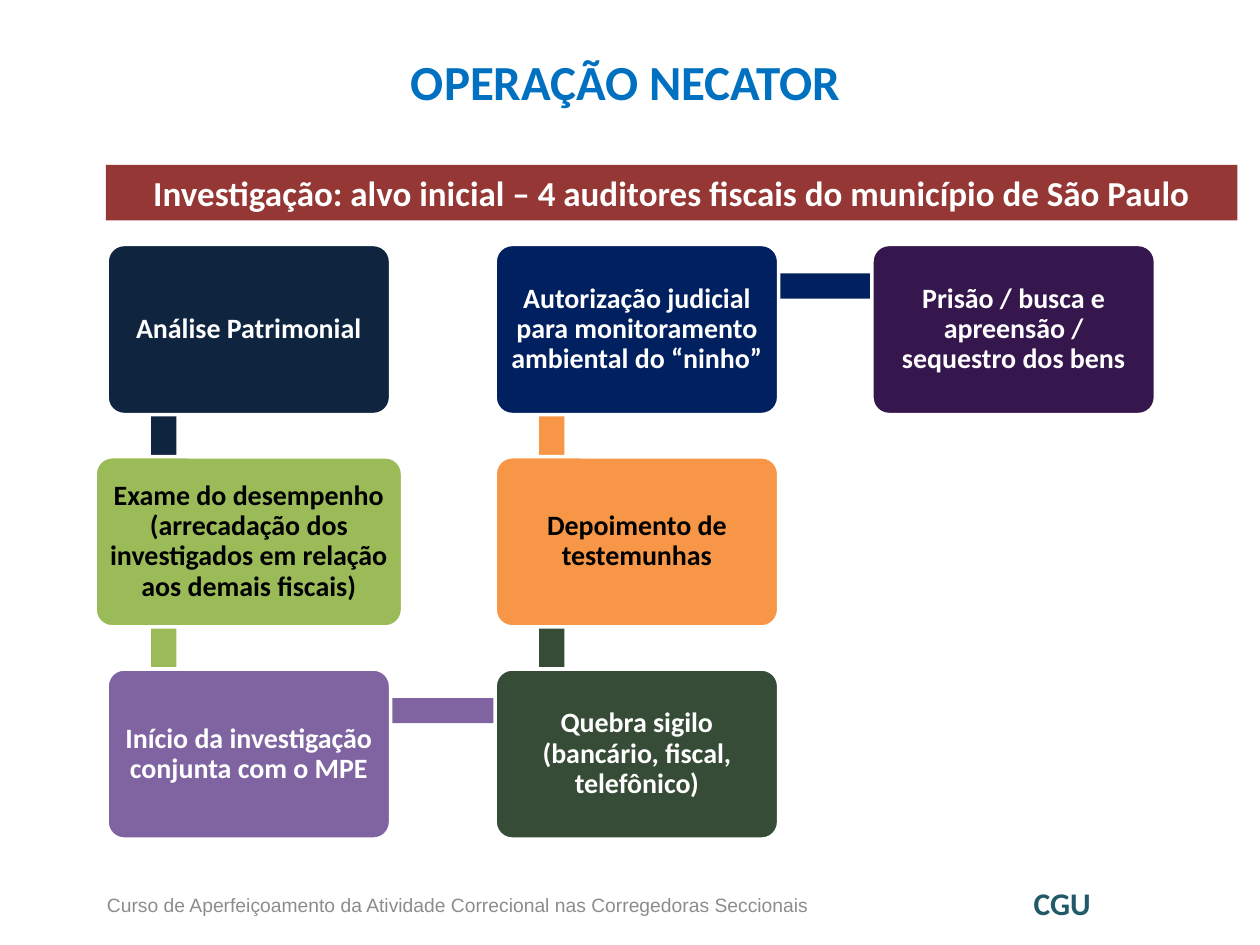
from pptx import Presentation
from pptx.dml.color import RGBColor
from pptx.enum.shapes import MSO_SHAPE
from pptx.enum.text import MSO_ANCHOR, PP_ALIGN
from pptx.util import Inches, Pt

RECT = MSO_SHAPE.RECTANGLE
ROUNDED = MSO_SHAPE.ROUNDED_RECTANGLE
CENTER, LEFT = PP_ALIGN.CENTER, PP_ALIGN.LEFT
TOP, MIDDLE = MSO_ANCHOR.TOP, MSO_ANCHOR.MIDDLE
TITLE_ONLY = 5

COLORS = {
    "title": "0070C0", "banner": "953735", "white": "FFFFFF", "black": "000000",
    "navy": "0F243E", "green": "9BBB59", "purple": "8064A2", "forest": "364C36",
    "orange": "F79646", "blue": "002060", "plum": "36174D",
    "footer": "8C8C8C", "agency": "215968",
}

# Flow grid, relative to its box: column lefts and an even row step
COLUMNS = (0, 3.08, 6.07)
ROW_STEP = 1.685
STEP_W, STEP_H = 2.25, 1.35
BAR = 0.2

# Column, row, width, fill, text colour, wording, in reading order of the flow
STEPS = [
    (0, 0, STEP_W, "navy", "white", "Análise Patrimonial"),
    (0, 1, 2.44, "green", "black", "Exame do desempenho (arrecadação dos "
     "investigados em relação aos demais fiscais)"),
    (0, 2, STEP_W, "purple", "white", "Início da investigação conjunta com o MPE"),
    (1, 2, STEP_W, "forest", "white", "Quebra sigilo (bancário, fiscal, telefônico)"),
    (1, 1, STEP_W, "orange", "black", "Depoimento de testemunhas"),
    (1, 0, STEP_W, "blue", "white",
     "Autorização judicial para monitoramento ambiental do “ninho”"),
    (2, 0, STEP_W, "plum", "white", "Prisão / busca e apreensão / sequestro dos bens"),
]


def rgb(name):
    return RGBColor.from_string(COLORS[name])


def write(shape, text, size, color, align=CENTER, anchor=TOP, font="Calibri",
          bold=True):
    frame = shape.text_frame
    frame.text = text
    frame.word_wrap = True
    frame.vertical_anchor = anchor
    paragraph = frame.paragraphs[0]
    paragraph.alignment = align
    style = paragraph.runs[0].font
    style.name, style.size, style.bold = font, Pt(size), bold
    style.color.rgb = rgb(color)
    return frame


def add_block(slide, kind, box, fill):
    block = slide.shapes.add_shape(kind, *map(Inches, box))
    block.shadow.inherit = False
    block.fill.solid()
    block.fill.fore_color.rgb = rgb(fill)
    block.line.fill.background()
    return block


def add_title(slide, box):
    title = slide.shapes.title
    title.left, title.top, title.width, title.height = map(Inches, box)
    write(title, "OPERAÇÃO NECATOR", 28, "title")


def add_banner(slide, box):
    banner = add_block(slide, RECT, box, "banner")
    write(banner, "Investigação: alvo inicial – 4 auditores fiscais do município "
          "de São Paulo", 20, "white")


def add_flow(slide, left, top):
    def corner(step):
        return left + COLUMNS[step[0]], top + step[1] * ROW_STEP

    # Bars joining each step to the next, behind the steps
    for step, following in zip(STEPS, STEPS[1:]):
        (x, y), (next_x, next_y) = corner(step), corner(following)
        if step[1] == following[1]:
            box = (x + 0.45, y + 0.23, next_x - x, BAR)
        else:
            box = (x + 0.35, min(y, next_y) + 0.33, BAR, ROW_STEP)
        add_block(slide, RECT, box, step[3])

    # Steps, centred on their column
    for step in STEPS:
        width, fill, text_color, text = step[2:]
        x, y = corner(step)
        block = add_block(slide, ROUNDED,
                          (x - (width - STEP_W) / 2, y, width, STEP_H), fill)
        block.adjustments[0] = 0.1
        block.line.color.rgb = rgb("white")
        block.line.width = Pt(2)
        frame = write(block, text, 16, text_color, anchor=MIDDLE)
        frame.margin_left = frame.margin_right = Inches(0.07)
        frame.margin_top = frame.margin_bottom = Inches(0.07)
        frame.paragraphs[0].line_spacing = 0.9


def add_footer(slide, left, top):
    course = slide.shapes.add_textbox(
        Inches(left), Inches(top), Inches(8.62), Inches(0.48))
    write(course, "Curso de Aperfeiçoamento da Atividade Correcional nas "
          "Corregedoras Seccionais", 11, "footer", LEFT, MIDDLE, "Arial", False)
    agency = slide.shapes.add_textbox(
        Inches(left + 7.17), Inches(top + 0.03), Inches(1.02), Inches(0.4))
    write(agency, "CGU", 18, "agency")


def main():
    deck = Presentation()
    deck.slide_width, deck.slide_height = Inches(10), Inches(7.5)
    slide = deck.slides.add_slide(deck.slide_layouts[TITLE_ONLY])
    add_title(slide, (0.12, 0.36, 9.69, 0.57))
    add_flow(slide, 0.85, 1.94)
    add_banner(slide, (0.84, 1.31, 8.98, 0.44))
    add_footer(slide, 0.75, 6.94)
    deck.save("out.pptx")


if __name__ == "__main__":
    main()
